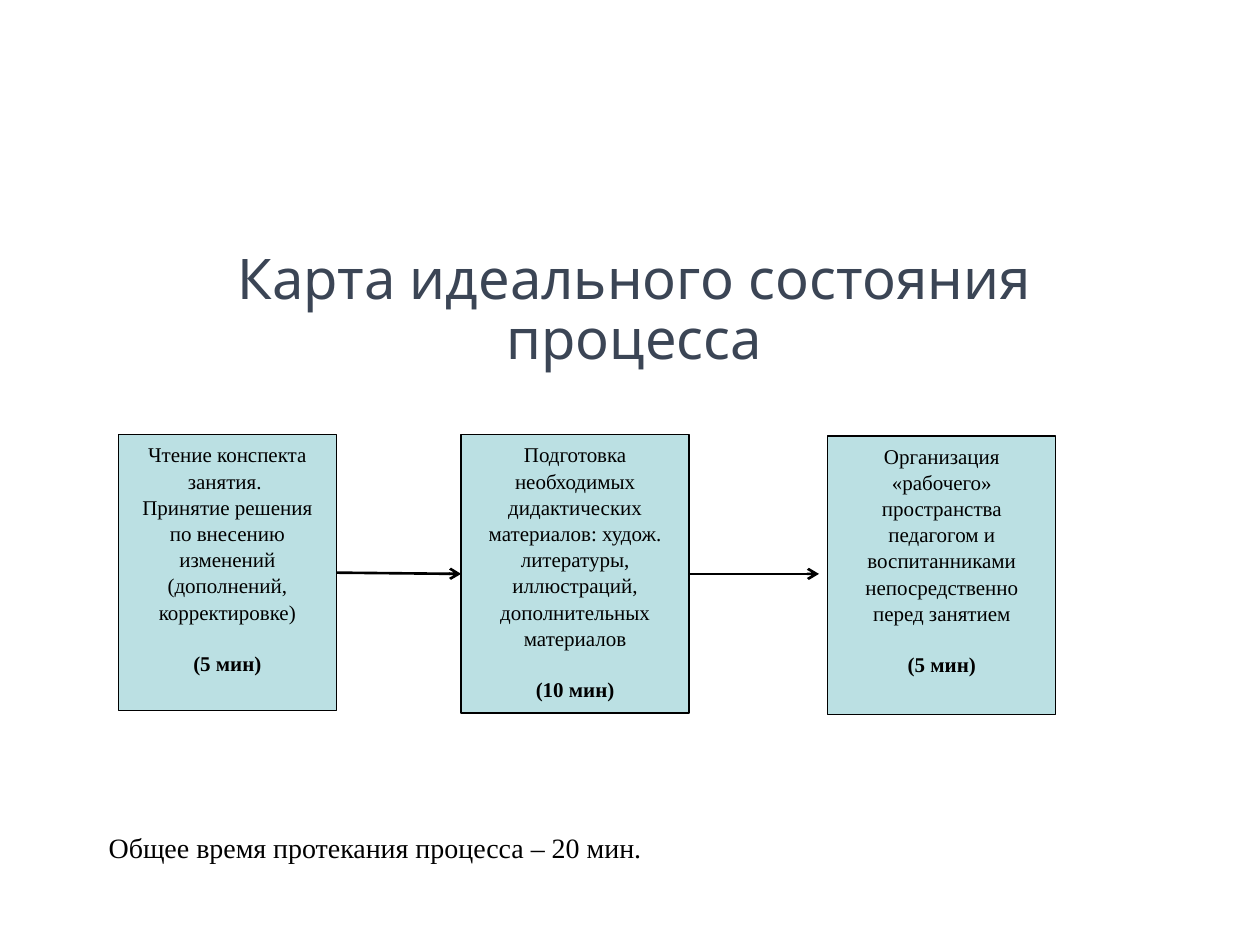
from lxml import etree
from pptx import Presentation
from pptx.dml.color import RGBColor
from pptx.enum.shapes import MSO_CONNECTOR, MSO_SHAPE
from pptx.enum.text import MSO_ANCHOR, PP_ALIGN
from pptx.oxml.ns import qn
from pptx.util import Inches, Pt

RECTANGLE = MSO_SHAPE.RECTANGLE
STRAIGHT = MSO_CONNECTOR.STRAIGHT
CENTER = PP_ALIGN.CENTER
TOP = MSO_ANCHOR.TOP
LEFT_SIDE, RIGHT_SIDE = 1, 3
TITLE_ONLY = 5

COLORS = {"title": "3B4555", "step": "BBE0E3", "ink": "000000"}
TITLE_FONT, BODY_FONT = "League Spartan", "Times New Roman"
LINE_SPACING = 1.04
BLANK_LINE = Pt(14.4)

# Each step: box in inches, description paragraphs, duration
STEPS = [
    ((0.94, 3.45, 1.73, 2.19),
     ["Чтение конспекта занятия. ",
      "Принятие решения по внесению изменений (дополнений, корректировке)"],
     "(5 мин)"),
    ((3.66, 3.45, 1.81, 2.21),
     ["Подготовка необходимых дидактических материалов: худож. литературы, "
      "иллюстраций, дополнительных материалов"],
     "(10 мин)"),
    ((6.57, 3.46, 1.81, 2.21),
     ["Организация «рабочего» пространства педагогом и воспитанниками "
      "непосредственно перед занятием"],
     "(5 мин)"),
]


def color(name):
    return RGBColor.from_string(COLORS[name])


def format_paragraph(para, font_name, size, color_name, bold=False):
    para.alignment = CENTER
    para.font.name = font_name
    para.font.size = Pt(size)
    para.font.bold = bold
    para.font.color.rgb = color(color_name)


def add_title(page, box, text):
    title = page.shapes.title
    title.left, title.top, title.width, title.height = map(Inches, box)
    frame = title.text_frame
    frame.text = text
    frame.word_wrap = True
    frame.vertical_anchor = TOP
    para = frame.paragraphs[0]
    format_paragraph(para, TITLE_FONT, 32, "title")
    para.line_spacing = 0.9


def add_step(page, box, description, duration):
    step = page.shapes.add_shape(RECTANGLE, *map(Inches, box))
    step.shadow.inherit = False
    step.fill.solid()
    step.fill.fore_color.rgb = color("step")
    step.line.color.rgb = color("ink")
    step.line.width = Pt(0.75)
    frame = step.text_frame
    frame.word_wrap = True
    frame.vertical_anchor = TOP
    lines = description + [duration]
    frame.text = "\n".join(lines)
    for para in frame.paragraphs:
        format_paragraph(para, BODY_FONT, 12, "ink")
        para.line_spacing = LINE_SPACING
    last = frame.paragraphs[-1]
    last.font.bold = True
    last.space_before = BLANK_LINE
    return step


def add_arrow(page, source, target, gap=0):
    """Join two steps; a gap leaves the arrowhead short of the target."""
    start_y = source.top + source.height // 2
    arrow = page.shapes.add_connector(
        STRAIGHT, source.left + source.width, start_y,
        target.left - Inches(gap), start_y)
    arrow.begin_connect(source, RIGHT_SIDE)
    if not gap:
        arrow.end_connect(target, LEFT_SIDE)
    arrow.line.color.rgb = color("ink")
    arrow.line.width = Pt(1.5)
    line = arrow.line._get_or_add_ln()
    etree.SubElement(line, qn("a:tailEnd"), type="arrow")
    etree.SubElement(arrow._element.spPr, qn("a:effectLst"))


def add_total(page, box, text):
    total = page.shapes.add_textbox(*map(Inches, box))
    frame = total.text_frame
    frame.word_wrap = True
    frame.text = text
    format_paragraph(frame.paragraphs[0], BODY_FONT, 16, "ink")


def main():
    deck = Presentation()
    deck.slide_width, deck.slide_height = Inches(10), Inches(7.5)
    page = deck.slides.add_slide(deck.slide_layouts[TITLE_ONLY])
    add_title(page, (0.91, 1.94, 8.25, 0.64),
              "Карта идеального состояния процесса")
    reading, preparing, arranging = [add_step(page, *step) for step in STEPS]
    add_arrow(page, reading, preparing)
    add_arrow(page, preparing, arranging, gap=0.07)
    add_total(page, (0.71, 6.54, 4.59, 0.37),
              "Общее время протекания процесса – 20 мин. ")
    deck.save("out.pptx")


if __name__ == "__main__":
    main()
